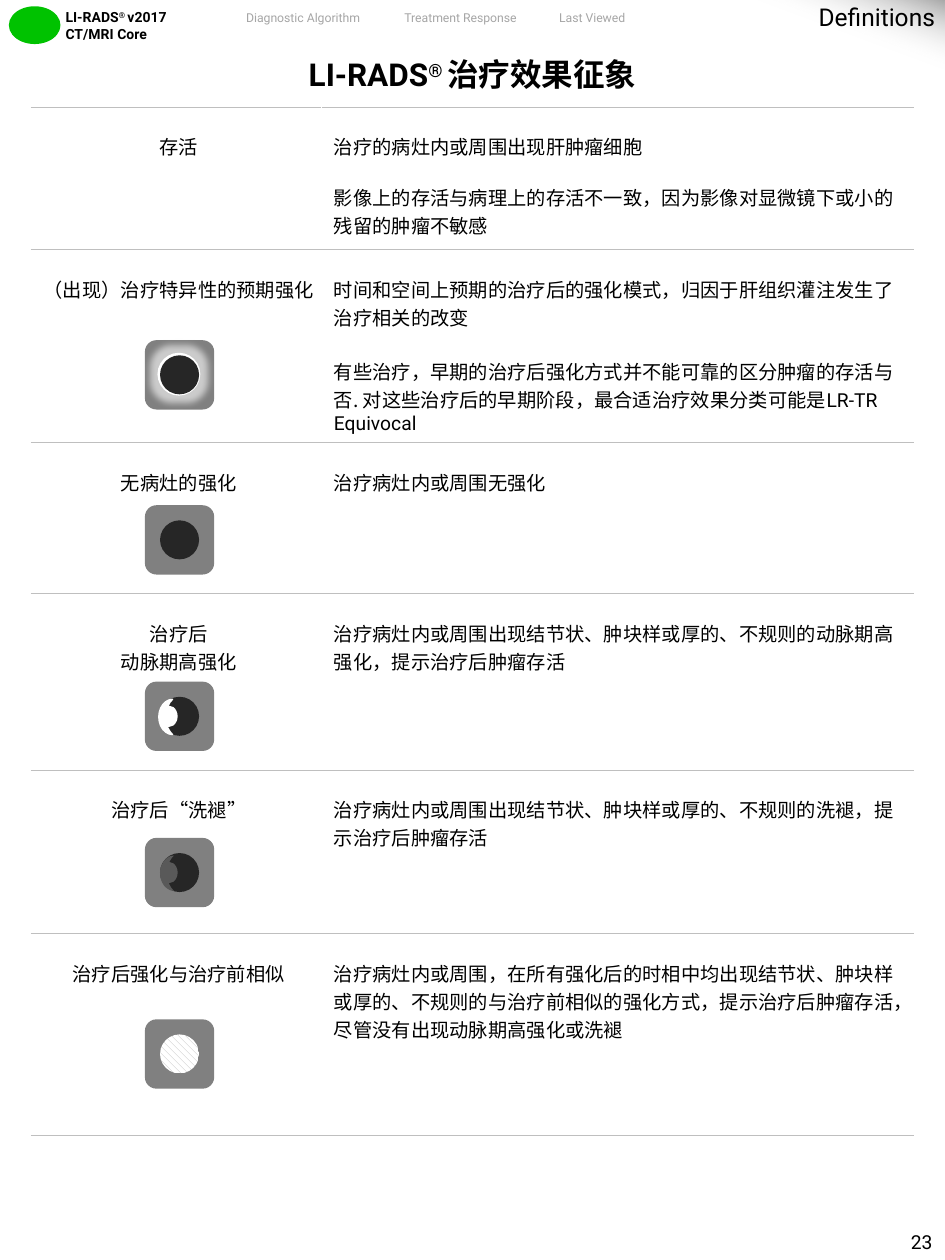
from lxml.etree import SubElement
from pptx import Presentation
from pptx.dml.color import RGBColor
from pptx.enum.dml import MSO_PATTERN
from pptx.enum.shapes import MSO_SHAPE
from pptx.enum.text import MSO_ANCHOR, PP_ALIGN
from pptx.oxml import parse_xml
from pptx.oxml.ns import nsdecls, qn
from pptx.util import Pt

UNIT = 9144
LATIN, HAN = "Roboto", "Noto Sans CJK SC"
GRAY, DARK, MID, WHITE, BLACK = "808080", "262626", "595959", "FFFFFF", "000000"
RULE, FAINT = "BFBFBF", "A6A6A6"
LEFT, MIDDLE, RIGHT = PP_ALIGN.LEFT, PP_ALIGN.CENTER, PP_ALIGN.RIGHT
SIDES = ("margin_left", "margin_top", "margin_right", "margin_bottom")


def px(*vals):
    return [val * UNIT for val in vals]


def hue(code):
    return RGBColor.from_string(code)


def dress(item, values):
    for key, val in values.items():
        setattr(item, key, val)


class Page:
    def __init__(self, wide, high):
        self.deck = Presentation()
        self.deck.slide_width, self.deck.slide_height = px(wide, high)
        self.slide = self.deck.slides.add_slide(self.deck.slide_layouts[6])
        self.look = {"name": HAN, "size": Pt(11), "bold": False}

    def words(self, frame, paras, align=LEFT, gap=0, color=BLACK, **look):
        for row, runs in enumerate(paras):
            para = frame.paragraphs[0] if row == 0 else frame.add_paragraph()
            para.alignment = align
            if row and gap:
                para.space_before = Pt(gap)
            for text, face, lift in runs:
                run = para.add_run()
                run.text = text
                dress(run.font, {**self.look, **look, "name": face})
                run.font.color.rgb = hue(color)
                props = run._r.get_or_add_rPr()
                if lift:
                    props.set("baseline", "30000")
                SubElement(props, qn("a:ea")).set("typeface", face)

    def label(self, box, paras, inset=(10, 5, 10, 5), anchor=MSO_ANCHOR.TOP, wrap=True, **look):
        frame = self.slide.shapes.add_textbox(*px(*box)).text_frame
        dress(frame, {"word_wrap": wrap, "vertical_anchor": anchor, **dict(zip(SIDES, px(*inset)))})
        self.words(frame, paras, **look)

    def shape(self, kind, box, fill, home=None, line=None):
        item = (home or self.slide).shapes.add_shape(kind, *px(*box))
        item.shadow.inherit = False
        item.fill.solid()
        item.fill.fore_color.rgb = hue(fill)
        if line:
            item.line.color.rgb = hue(line)
            item.line.width = Pt(0.75)
        else:
            item.line.fill.background()
        return item

    def tile(self, top):
        home = self.slide.shapes.add_group_shape()
        self.shape(MSO_SHAPE.ROUNDED_RECTANGLE, (115, top, 55, 55), GRAY, home)
        return home

    def disc(self, home, top, fill=DARK):
        return self.shape(MSO_SHAPE.OVAL, (127, top + 12, 31, 31), fill, home)

    def bite(self, top, left, fill, line=None):
        home = self.tile(top)
        self.disc(home, top)
        self.shape(MSO_SHAPE.MOON, (left, top + 14, 11, 28), fill, home, line)
        self.shape(MSO_SHAPE.OVAL, (127, top + 19, 14, 17), fill, home)

    def halo(self, top):
        home = self.tile(top)
        ring = self.shape(MSO_SHAPE.OVAL, (125, top + 10, 34, 34), WHITE, home)
        ring._element.spPr.find(qn("a:effectLst")).append(parse_xml(
            f'<a:glow {nsdecls("a")} rad="101600"><a:srgbClr val="{WHITE}">'
            '<a:alpha val="60000"/></a:srgbClr></a:glow>'))
        self.disc(home, top)

    def stripe(self, top):
        fill = self.disc(self.tile(top), top).fill
        fill.patterned()
        fill.pattern = MSO_PATTERN.WIDE_DOWNWARD_DIAGONAL
        fill.fore_color.rgb, fill.back_color.rgb = hue(RULE), hue(WHITE)

    def corner(self, box):
        item = self.shape(MSO_SHAPE.RIGHT_TRIANGLE, box, WHITE)
        item.rotation = 180
        old = item._element.spPr.find(qn("a:solidFill"))
        old.getparent().replace(old, parse_xml(
            f'<a:gradFill {nsdecls("a")} rotWithShape="1"><a:gsLst>'
            f'<a:gs pos="0"><a:srgbClr val="{FAINT}"/></a:gs>'
            f'<a:gs pos="50000"><a:srgbClr val="{WHITE}"><a:alpha val="0"/></a:srgbClr></a:gs>'
            '</a:gsLst><a:lin ang="17400000" scaled="0"/></a:gradFill>'))

    def cell(self, cell, edges, inset):
        props = cell._tc.get_or_add_tcPr()
        for edge in edges:
            props.append(parse_xml(
                f'<a:{edge} {nsdecls("a")} w="6350"><a:solidFill>'
                f'<a:srgbClr val="{RULE}"/></a:solidFill></a:{edge}>'))
        cell.fill.solid()
        cell.fill.fore_color.rgb = hue(WHITE)
        dress(cell, dict(zip(SIDES, px(*inset))))

    def table(self, box, cols, highs, title, rows):
        grid = self.slide.shapes.add_table(len(highs), len(cols), *px(*box)).table
        dress(grid, {"first_row": False, "horz_banding": False})
        for col, wide in zip(grid.columns, px(*cols)):
            col.width = wide
        for row, high in zip(grid.rows, px(*highs)):
            row.height = high
        for cell in grid.rows[0].cells:
            self.cell(cell, ["lnB"], (10, 0, 10, 15))
        head = grid.cell(0, 0)
        head.merge(grid.cell(0, 1))
        head.vertical_anchor = MSO_ANCHOR.MIDDLE
        self.words(head.text_frame, [title], MIDDLE, size=Pt(18), bold=True)
        for at, (term, sense, gap) in enumerate(rows, 1):
            for col, (paras, align, side) in enumerate([(term, MIDDLE, 8), (sense, LEFT, 10)]):
                cell = grid.cell(at, col)
                self.cell(cell, ["lnT", "lnB"], (side, 20, 4, 20))
                self.words(cell.text_frame, paras, align, gap)


def han(*lines):
    return [[(line, HAN, False)] for line in lines]


def roman(*lines):
    return [[(line, LATIN, False)] for line in lines]


MARK = [("LI-RADS", LATIN, False), ("® ", LATIN, True)]
EARLY = han("时间和空间上预期的治疗后的强化模式，归因于肝组织灌注发生了治疗相关的改变",
            "有些治疗，早期的治疗后强化方式并不能可靠的区分肿瘤的存活与否. 对这些治疗后的早期阶段，最合适治疗效果分类可能是")
EARLY[1] += roman("LR-TR Equivocal")[0]
ROWS = [
    (han("存活"),
     han("治疗的病灶内或周围出现肝肿瘤细胞",
         "影像上的存活与病理上的存活不一致，因为影像对显微镜下或小的残留的肿瘤不敏感"), 13),
    (han("（出现）治疗特异性的预期强化"), EARLY, 15),
    (han("无病灶的强化"), han("治疗病灶内或周围无强化"), 0),
    (han("治疗后", "动脉期高强化"),
     han("治疗病灶内或周围出现结节状、肿块样或厚的、不规则的动脉期高强化，提示治疗后肿瘤存活"), 0),
    (han("治疗后“洗褪”"),
     han("治疗病灶内或周围出现结节状、肿块样或厚的、不规则的洗褪，提示治疗后肿瘤存活"), 0),
    (han("治疗后强化与治疗前相似"),
     han("治疗病灶内或周围，在所有强化后的时相中均出现结节状、肿块样或厚的、不规则的与治疗前相似的强化方式，"
         "提示治疗后肿瘤存活，尽管没有出现动脉期高强化或洗褪"), 0),
]
TABS = [("Diagnostic Algorithm", 183, 115), ("Treatment Response", 308, 115), ("Last Viewed", 432, 76)]


def main():
    page = Page(750, 1000)
    page.shape(MSO_SHAPE.OVAL, (7, 5, 41, 30), "00C200")
    page.label((45, 3, 129, 34), [MARK + roman("v2017")[0]] + roman("CT/MRI Core"),
               (7, 4, 7, 4), size=Pt(8), bold=True)
    for text, left, wide in TABS:
        page.label((left, 3, wide, 22), roman(text), anchor=MSO_ANCHOR.MIDDLE,
                   wrap=False, align=MIDDLE, color=FAINT, size=Pt(7))
    page.table((25, 40, 700, 861), (230, 470), (45, 113, 153, 120, 140, 130, 160),
               MARK + han("治疗效果征象")[0], ROWS)
    page.halo(270)
    page.disc(page.tile(401), 401)
    page.bite(541, 126, WHITE, WHITE)
    page.bite(665, 127, MID)
    page.stripe(809)
    page.label((701, 971, 49, 29), roman("23"), anchor=MSO_ANCHOR.MIDDLE, wrap=False, align=RIGHT)
    page.corner((599, 0, 151, 55))
    page.label((542, -3, 210, 34), roman("Definitions"), align=RIGHT, size=Pt(14))
    page.deck.save("out.pptx")


if __name__ == "__main__":
    main()
